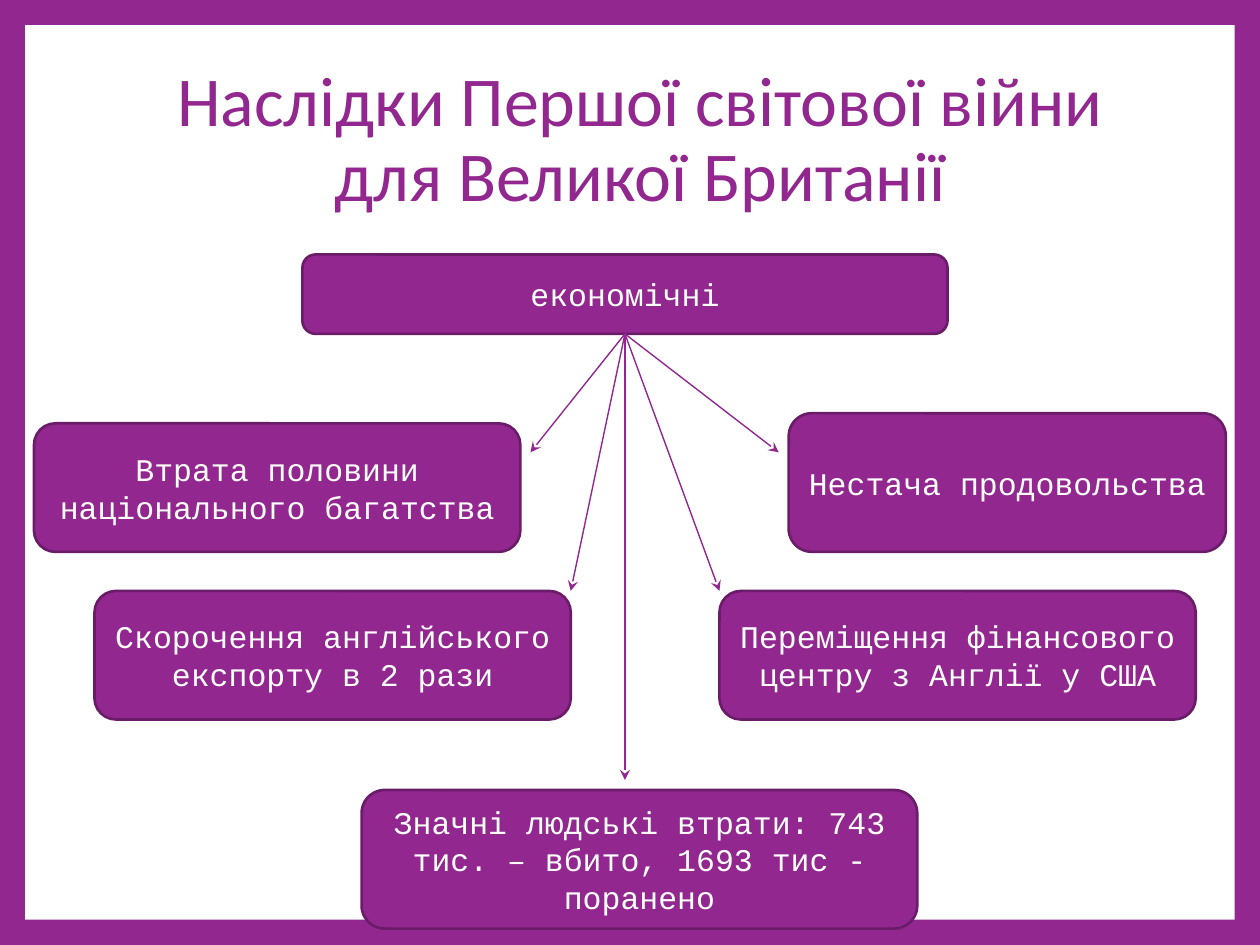
from dataclasses import dataclass

from lxml import etree
from pptx import Presentation
from pptx.dml.color import RGBColor
from pptx.enum.shapes import MSO_CONNECTOR, MSO_SHAPE
from pptx.enum.text import MSO_ANCHOR, PP_ALIGN
from pptx.oxml.ns import qn
from pptx.shapes.base import BaseShape
from pptx.slide import Slide
from pptx.text.text import TextFrame
from pptx.util import Inches, Pt

RECTANGLE = MSO_SHAPE.RECTANGLE
ROUNDED_RECTANGLE = MSO_SHAPE.ROUNDED_RECTANGLE
STRAIGHT = MSO_CONNECTOR.STRAIGHT
CENTER = PP_ALIGN.CENTER
MIDDLE = MSO_ANCHOR.MIDDLE


@dataclass(frozen=True)
class Theme:
    purple: RGBColor = RGBColor(0x92, 0x27, 0x8F)
    dark_purple: RGBColor = RGBColor(0x6A, 0x1C, 0x68)
    white: RGBColor = RGBColor(0xFF, 0xFF, 0xFF)
    title_font: str = "Calibri"
    box_font: str = "Courier New"
    title_size: float = 40
    box_size: float = 18
    border_width: float = 1.5
    arrow_width: float = 0.79


@dataclass(frozen=True)
class Box:
    text: str
    left: float
    top: float
    width: float
    height: float


THEME = Theme()
SLIDE_WIDTH, SLIDE_HEIGHT, FRAME = 10, 7.5, 0.2

TITLE = Box("Наслідки Першої світової війни для Великої Британії", 1.03, 0.38, 8.1, 1.48)
CAUSE = Box("економічні", 2.4, 2.02, 5.12, 0.63)
CONSEQUENCES = [
    Box("Втрата половини національного багатства", 0.27, 3.36, 3.86, 1.02),
    Box("Нестача продовольства", 6.26, 3.28, 3.47, 1.1),
    Box("Скорочення англійського експорту в 2 рази", 0.75, 4.69, 3.78, 1.02),
    Box("Переміщення фінансового центру з Англії у США", 5.71, 4.69, 3.78, 1.02),
    Box("Значні людські втрати: 743 тис. – вбито, 1693 тис - поранено", 2.87, 6.27, 4.41, 1.1),
]
ARROW_START = (CAUSE.left + CAUSE.width / 2, CAUSE.top + CAUSE.height)
ARROW_ENDS = [(4.21, 3.59), (6.18, 3.59), (4.53, 4.69), (5.71, 4.69), (ARROW_START[0], 6.19)]


def write_text(frame: TextFrame, text: str, font: str, size: float, color: RGBColor,
               line_spacing: float = 1.0) -> None:
    frame.word_wrap = True
    frame.vertical_anchor = MIDDLE
    paragraph = frame.paragraphs[0]
    paragraph.alignment = CENTER
    paragraph.line_spacing = line_spacing
    run = paragraph.add_run()
    run.text = text
    run.font.name = font
    run.font.size = Pt(size)
    run.font.color.rgb = color


def add_filled_shape(slide: Slide, kind: MSO_SHAPE, box: Box, fill: RGBColor) -> BaseShape:
    shape = slide.shapes.add_shape(
        kind, Inches(box.left), Inches(box.top), Inches(box.width), Inches(box.height))
    shape.shadow.inherit = False
    shape.fill.solid()
    shape.fill.fore_color.rgb = fill
    return shape


def add_title(slide: Slide, box: Box) -> None:
    title = slide.shapes.add_textbox(
        Inches(box.left), Inches(box.top), Inches(box.width), Inches(box.height))
    write_text(title.text_frame, box.text, THEME.title_font, THEME.title_size,
               THEME.purple, line_spacing=0.9)


def add_box(slide: Slide, box: Box) -> None:
    shape = add_filled_shape(slide, ROUNDED_RECTANGLE, box, THEME.purple)
    shape.line.color.rgb = THEME.dark_purple
    shape.line.width = Pt(THEME.border_width)
    write_text(shape.text_frame, box.text, THEME.box_font, THEME.box_size, THEME.white)


def add_arrow(slide: Slide, start: tuple[float, float], end: tuple[float, float]) -> None:
    connector = slide.shapes.add_connector(
        STRAIGHT, *(Inches(value) for value in start + end))
    connector.line.color.rgb = THEME.purple
    connector.line.width = Pt(THEME.arrow_width)
    # Stealth arrowhead and no shadow
    properties = connector.element.spPr
    etree.SubElement(properties.find(qn("a:ln")), qn("a:tailEnd"), type="stealth")
    etree.SubElement(properties, qn("a:effectLst"))


def main() -> None:
    presentation = Presentation()
    presentation.slide_width = Inches(SLIDE_WIDTH)
    presentation.slide_height = Inches(SLIDE_HEIGHT)
    slide = presentation.slides.add_slide(presentation.slide_layouts[6])

    # Purple frame around a white panel
    slide.background.fill.solid()
    slide.background.fill.fore_color.rgb = THEME.purple
    panel = Box("", FRAME, FRAME, SLIDE_WIDTH - 2 * FRAME, SLIDE_HEIGHT - 2 * FRAME)
    add_filled_shape(slide, RECTANGLE, panel, THEME.white).line.fill.background()

    # Title, cause and consequences
    add_title(slide, TITLE)
    for box in [CAUSE, *CONSEQUENCES]:
        add_box(slide, box)

    # Arrows fanning out from the cause
    for end in ARROW_ENDS:
        add_arrow(slide, ARROW_START, end)

    presentation.save("out.pptx")


if __name__ == "__main__":
    main()
